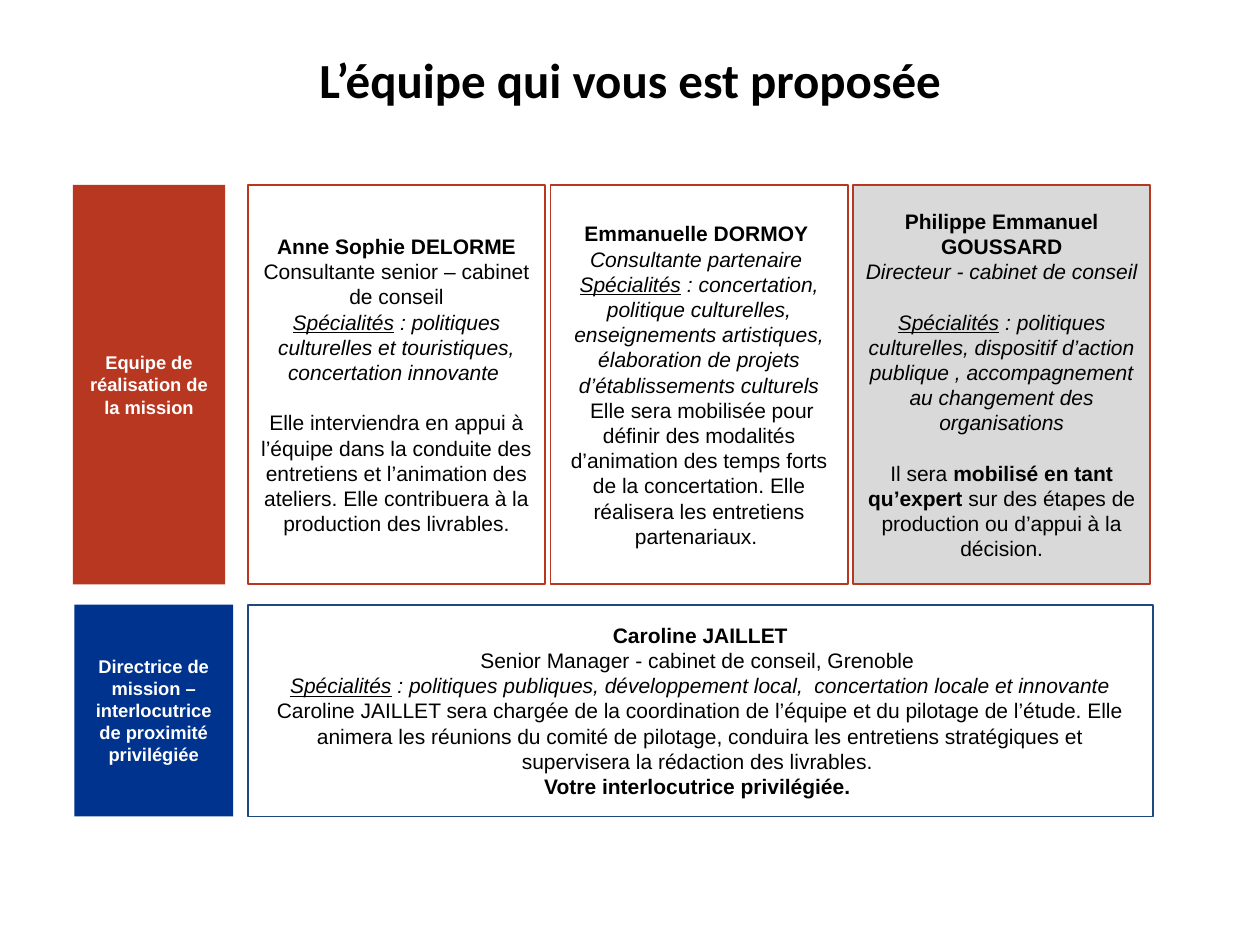
from pptx import Presentation
from pptx.dml.color import RGBColor
from pptx.enum.shapes import MSO_SHAPE
from pptx.enum.text import MSO_ANCHOR, PP_ALIGN
from pptx.util import Cm, Pt

RECTANGLE = MSO_SHAPE.RECTANGLE
MIDDLE = MSO_ANCHOR.MIDDLE
CENTER = PP_ALIGN.CENTER

BLACK = RGBColor(0x00, 0x00, 0x00)
WHITE = RGBColor(0xFF, 0xFF, 0xFF)
RED = RGBColor(0xB7, 0x37, 0x20)
BLUE = RGBColor(0x00, 0x33, 0x8D)
NAVY = RGBColor(0x1F, 0x49, 0x7D)
GREY = RGBColor(0xD9, 0xD9, 0xD9)

LINE_GAP = 14.4


def write_text(box, paragraphs, size=12, color=BLACK, font="Arial"):
    """Each paragraph is (points before, [(text, style)]); style holds any of b, i, u."""
    frame = box.text_frame
    frame.word_wrap = True
    frame.vertical_anchor = MIDDLE
    for index, (space, spans) in enumerate(paragraphs):
        para = frame.add_paragraph() if index else frame.paragraphs[0]
        para.alignment = CENTER
        para.space_before = Pt(space)
        for text, style in spans:
            span = para.add_run()
            span.text = text
            span.font.name = font
            span.font.size = Pt(size)
            span.font.color.rgb = color
            span.font.bold = "b" in style
            span.font.italic = "i" in style
            span.font.underline = "u" in style


def add_panel(left, top, width, height, paragraphs, fill=None, line=None, **text_format):
    panel = page.shapes.add_shape(RECTANGLE, Cm(left), Cm(top), Cm(width), Cm(height))
    panel.shadow.inherit = False
    if fill is None:
        panel.fill.background()
    else:
        panel.fill.solid()
        panel.fill.fore_color.rgb = fill
    if line is None:
        panel.line.fill.background()
    else:
        panel.line.color.rgb = line
        panel.line.width = Pt(1)
    write_text(panel, paragraphs, **text_format)


deck = Presentation()
deck.slide_width, deck.slide_height = Cm(25.4), Cm(19.05)
page = deck.slides.add_slide(deck.slide_layouts[6])

title = page.shapes.add_textbox(Cm(1.27), Cm(0), Cm(22.86), Cm(3.18))
write_text(title, [(0, [("L’équipe qui vous est proposée", "b")])], size=28, font="Calibri")

# Mission team
TEAM_TOP, TEAM_HEIGHT = 3.73, 8.05
CARD_LEFT, CARD_WIDTH, CARD_PITCH = 5, 5.99, 6.1

add_panel(1.47, TEAM_TOP, 3.07, TEAM_HEIGHT,
          [(0, [("Equipe de réalisation de la mission", "b")])],
          fill=RED, size=10.5, color=WHITE)

team = [
    (None, [
        (0, [("Anne Sophie DELORME", "b")]),
        (0, [("Consultante senior – cabinet de conseil", "")]),
        (0, [("Spécialités", "iu"),
             (" : politiques culturelles et touristiques, concertation innovante ", "i")]),
        (LINE_GAP, [("Elle interviendra en appui à l’équipe dans la conduite des "
                     "entretiens et l’animation des ateliers. Elle contribuera à la "
                     "production des livrables.", "")]),
    ]),
    (None, [
        (0, [("Emmanuelle DORMOY ", "b")]),
        (0, [("Consultante partenaire ", "i")]),
        (0, [("Spécialités", "iu"),
             (" : concertation, politique culturelles, enseignements artistiques, "
              "élaboration de projets d’établissements culturels", "i")]),
        (0, [(" Elle sera mobilisée pour définir des modalités d’animation des temps "
              "forts de la concertation. Elle réalisera les entretiens partenariaux. ", "")]),
    ]),
    (GREY, [
        (0, [("Philippe Emmanuel GOUSSARD", "b")]),
        (0, [("Directeur - cabinet de conseil", "i")]),
        (LINE_GAP, [("Spécialités", "iu"),
                    (" : politiques culturelles, dispositif d’action publique , "
                     "accompagnement au changement des organisations", "i")]),
        (LINE_GAP, [("Il sera ", ""), ("mobilisé en tant qu’expert", "b"),
                    (" sur des étapes de production ou d’appui à la décision.", "")]),
    ]),
]
for column, (fill, paragraphs) in enumerate(team):
    add_panel(CARD_LEFT + column * CARD_PITCH, TEAM_TOP, CARD_WIDTH, TEAM_HEIGHT,
              paragraphs, fill=fill, line=RED)

# Mission director
DIRECTOR_TOP, DIRECTOR_HEIGHT = 12.19, 4.27

add_panel(1.5, DIRECTOR_TOP, 3.2, DIRECTOR_HEIGHT,
          [(0, [("Directrice de mission – interlocutrice de proximité privilégiée", "b")])],
          fill=BLUE, size=10.5, color=WHITE)
add_panel(CARD_LEFT, DIRECTOR_TOP, 18.24, DIRECTOR_HEIGHT, [
    (0, [("Caroline JAILLET", "b")]),
    (0, [("Senior Manager - cabinet de conseil, Grenoble ", "")]),
    (0, [("Spécialités", "iu"),
         (" : politiques publiques, développement local,  concertation locale et innovante",
          "i")]),
    (0, [("Caroline JAILLET sera chargée de la coordination de l’équipe et du pilotage de "
          "l’étude. Elle animera les réunions du comité de pilotage, conduira les "
          "entretiens stratégiques et supervisera la rédaction des livrables. ", "")]),
    (0, [("Votre interlocutrice privilégiée. ", "b")]),
], line=NAVY)

deck.save("out.pptx")
